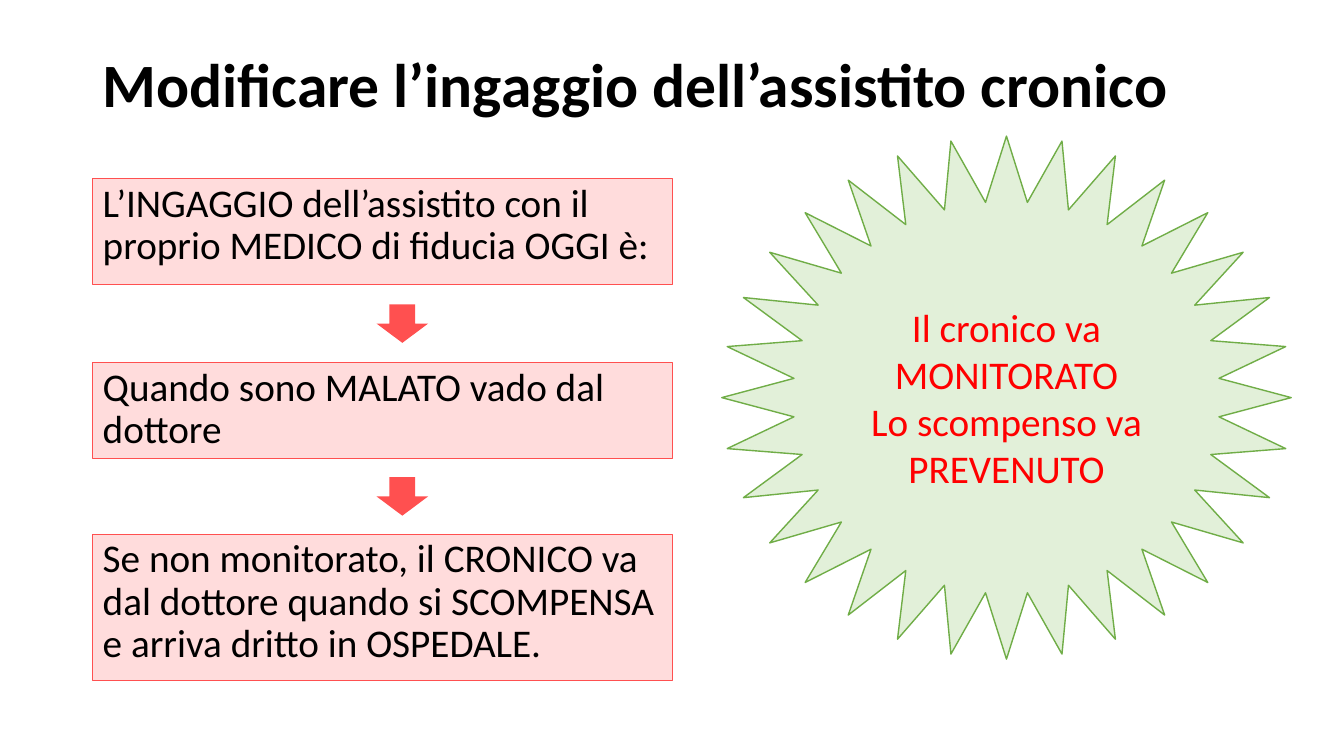
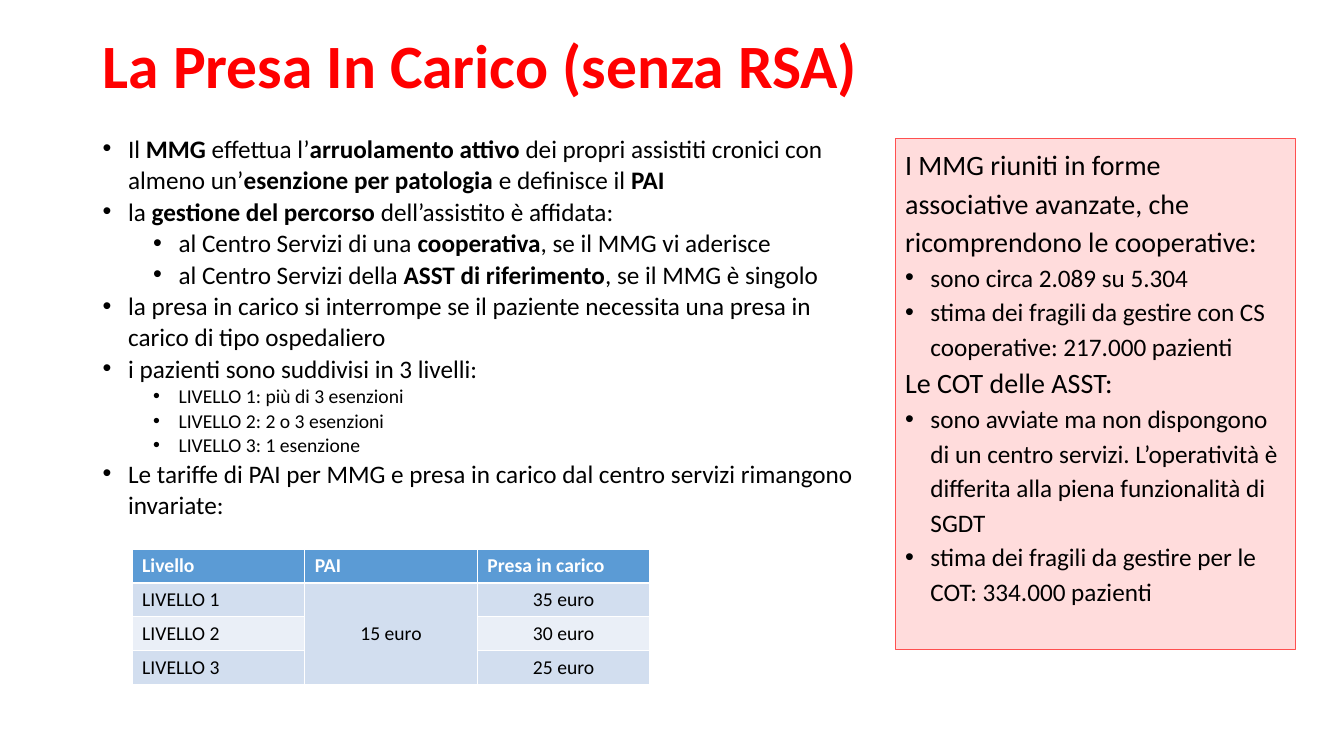
from pptx import Presentation
from pptx.dml.color import RGBColor
from pptx.enum import shapes, text
from pptx.oxml import ns
from pptx.util import Cm, Pt
from lxml import etree

BLACK = RGBColor(0x00, 0x00, 0x00)
WHITE = RGBColor(0xFF, 0xFF, 0xFF)
RED = RGBColor(0xFF, 0x00, 0x00)
CORAL = RGBColor(0xFF, 0x50, 0x50)
GREEN = RGBColor(0x70, 0xAD, 0x47)
PALE_GREEN = RGBColor(0xE2, 0xF0, 0xD9)
HEADER_BLUE = RGBColor(0x5B, 0x9B, 0xD5)
BAND_DARK = RGBColor(0xD2, 0xDE, 0xEF)
BAND_LIGHT = RGBColor(0xEA, 0xEF, 0xF7)

FONT = "Calibri"
MARGIN = 2.34
HANG = 0.64
# Left indent of each bullet level, in cm
BULLET_INDENT = {1: 0.64, 2: 1.91}
LEFT, CENTER = text.PP_ALIGN.LEFT, text.PP_ALIGN.CENTER
TOP, MIDDLE = text.MSO_ANCHOR.TOP, text.MSO_ANCHOR.MIDDLE


# Shared text and shape helpers
def style_run(r, size, color=BLACK, bold=False):
    r.font.name = FONT
    r.font.size = Pt(size)
    r.font.color.rgb = color
    r.font.bold = bold


def add_bullet(p, level):
    pPr = p._p.get_or_add_pPr()
    pPr.set("marL", str(Cm(BULLET_INDENT[level])))
    pPr.set("indent", str(-Cm(HANG)))
    etree.SubElement(pPr, ns.qn("a:buFont")).set("typeface", "Arial")
    etree.SubElement(pPr, ns.qn("a:buChar")).set("char", "•")


def write(tf, lines, color=BLACK, align=LEFT, anchor=TOP, spacing=1.0):
    """Fill a frame with (level, size, text) lines; ** toggles bold."""
    tf.word_wrap = True
    tf.vertical_anchor = anchor
    for i, (level, size, line) in enumerate(lines):
        p = tf.add_paragraph() if i else tf.paragraphs[0]
        if level:
            add_bullet(p, level)
        p.alignment = align
        p.line_spacing = spacing
        for j, part in enumerate(line.split("**")):
            if part:
                r = p.add_run()
                r.text = part
                style_run(r, size, color, bold=j % 2 == 1)


def add_box(slide, kind, box, fill, line=None, width=0.75, alpha=None):
    s = slide.shapes.add_shape(kind, *map(Cm, box))
    s.shadow.inherit = False
    s.fill.solid()
    s.fill.fore_color.rgb = fill
    if alpha is not None:
        clr = s._element.spPr.find(ns.qn("a:solidFill")).find(ns.qn("a:srgbClr"))
        etree.SubElement(clr, ns.qn("a:alpha")).set("val", str(alpha * 1000))
    if line is None:
        s.line.fill.background()
    else:
        s.line.color.rgb = line
        s.line.width = Pt(width)
    return s


def add_text(slide, box, lines, **style):
    write(slide.shapes.add_textbox(*map(Cm, box)).text_frame, lines, **style)


def add_title(slide, box, title, color=BLACK):
    add_text(slide, box, [(0, 44, f"**{title}**")], color=color,
             anchor=MIDDLE, spacing=0.9)


def add_panel(slide, box, lines, spacing):
    s = add_box(slide, shapes.MSO_SHAPE.RECTANGLE, box, CORAL, CORAL, alpha=20)
    write(s.text_frame, lines, spacing=spacing)


# Slide 1 regions
def add_steps(slide, left, width, steps):
    """Stack (top, height, text) panels with an arrow centred in each gap."""
    arrow_w, arrow_h, arrow_shift = 1.3, 0.97, 0.5
    previous_bottom = None
    for top, height, line in steps:
        add_panel(slide, (left, top, width, height), [(0, 28, line)], 0.9)
        if previous_bottom is not None:
            x = left + (width - arrow_w) / 2 + arrow_shift
            y = (previous_bottom + top - arrow_h) / 2
            add_box(slide, shapes.MSO_SHAPE.DOWN_ARROW,
                    (x, y, arrow_w, arrow_h), CORAL)
        previous_bottom = top + height


def add_star(slide, box, lines):
    s = add_box(slide, shapes.MSO_SHAPE.STAR_32_POINT, box, PALE_GREEN, GREEN, 1)
    write(s.text_frame, [(0, 28, line) for line in lines], color=RED,
          align=CENTER, anchor=MIDDLE)


# Slide 2 region
def add_rates(slide, box, rows):
    """Rate table; the PAI value spans all the body rows."""
    left, top, width, height = box
    table = slide.shapes.add_table(len(rows), len(rows[0]), *map(Cm, box)).table
    for col in table.columns:
        col.width = Cm(width / len(rows[0]))
    for row in table.rows:
        row.height = Cm(height / len(rows))
    for i, row in enumerate(rows):
        for j, value in enumerate(row):
            cell = table.cell(i, j)
            cell.fill.solid()
            cell.fill.fore_color.rgb = (
                HEADER_BLUE if i == 0 else BAND_DARK if i % 2 else BAND_LIGHT)
            cell.vertical_anchor = MIDDLE if i else TOP
            cell.text_frame.text = value
            p = cell.text_frame.paragraphs[0]
            p.alignment = CENTER if i and j else LEFT
            for r in p.runs:
                style_run(r, 14, BLACK if i else WHITE, bold=i == 0)
    table.cell(1, 1).merge(table.cell(len(rows) - 1, 1))


def build_engagement(slide):
    add_title(slide, (MARGIN, 0.36, 29.2, 3.68),
              "Modificare l’ingaggio dell’assistito cronico")
    add_steps(slide, MARGIN, 14.6, [
        (4.5, 2.67, "L’INGAGGIO dell’assistito con il proprio MEDICO di fiducia OGGI è:"),
        (9.14, 2.42, "Quando sono MALATO vado dal dottore"),
        (13.46, 3.7, "Se non monitorato, il CRONICO va dal dottore quando si "
                     "SCOMPENSA e arriva dritto in OSPEDALE."),
    ])
    add_star(slide, (18.19, 3.43, 14.35, 13.18),
             ["Il cronico va MONITORATO", "Lo scompenso va PREVENUTO"])


def build_care(slide):
    add_title(slide, (MARGIN, 0.63, 27.5, 2.18),
              "La Presa In Carico (senza RSA)", RED)
    # Enrolment rules
    add_text(slide, (MARGIN, 3.2, 19.53, 10.87), [
        (1, 18, "Il** MMG** effettua l’**arruolamento attivo **dei propri assistiti "
                "cronici con almeno un’**esenzione per patologia** e definisce il **PAI**"),
        (1, 18, "la **gestione del percorso **dell’assistito è affidata:"),
        (2, 18, "al Centro Servizi di una **cooperativa**, se il MMG vi aderisce"),
        (2, 18, "al Centro Servizi della **ASST di riferimento**, se il MMG è singolo"),
        (1, 18, "la presa in carico si interrompe se il paziente necessita una "
                "presa in carico di tipo ospedaliero"),
        (1, 18, "i pazienti sono suddivisi in 3 livelli:"),
        (2, 14, "LIVELLO 1: più di 3 esenzioni"),
        (2, 14, "LIVELLO 2: 2 o 3 esenzioni"),
        (2, 14, "LIVELLO 3: 1 esenzione"),
        (1, 18, "Le tariffe di PAI per MMG e presa in carico dal centro servizi "
                "rimangono invariate:"),
    ], spacing=1.04)
    add_rates(slide, (3.33, 13.84, 13.05, 3.4), [
        ("Livello", "PAI", "Presa in carico"),
        ("LIVELLO 1", "15 euro", "35 euro"),
        ("LIVELLO 2", "", "30 euro"),
        ("LIVELLO 3", "", "25 euro"),
    ])
    # Cooperatives and COT
    add_panel(slide, (22.56, 3.48, 10.1, 12.88), [
        (0, 20, "I MMG riuniti in forme associative avanzate, che ricomprendono "
                "le cooperative:"),
        (1, 18, "sono circa 2.089 su 5.304"),
        (1, 18, "stima dei fragili da gestire con CS cooperative: 217.000 pazienti"),
        (0, 20, "Le COT delle ASST:"),
        (1, 18, "sono avviate ma non dispongono di un centro servizi. L’operatività "
                "è differita alla piena funzionalità di SGDT"),
        (1, 18, "stima dei fragili da gestire per le COT: 334.000 pazienti"),
    ], 1.14)


def main():
    prs = Presentation()
    prs.slide_width, prs.slide_height = Cm(33.87), Cm(19.05)
    for build in (build_engagement, build_care):
        build(prs.slides.add_slide(prs.slide_layouts[6]))
    prs.save("out.pptx")


if __name__ == "__main__":
    main()
